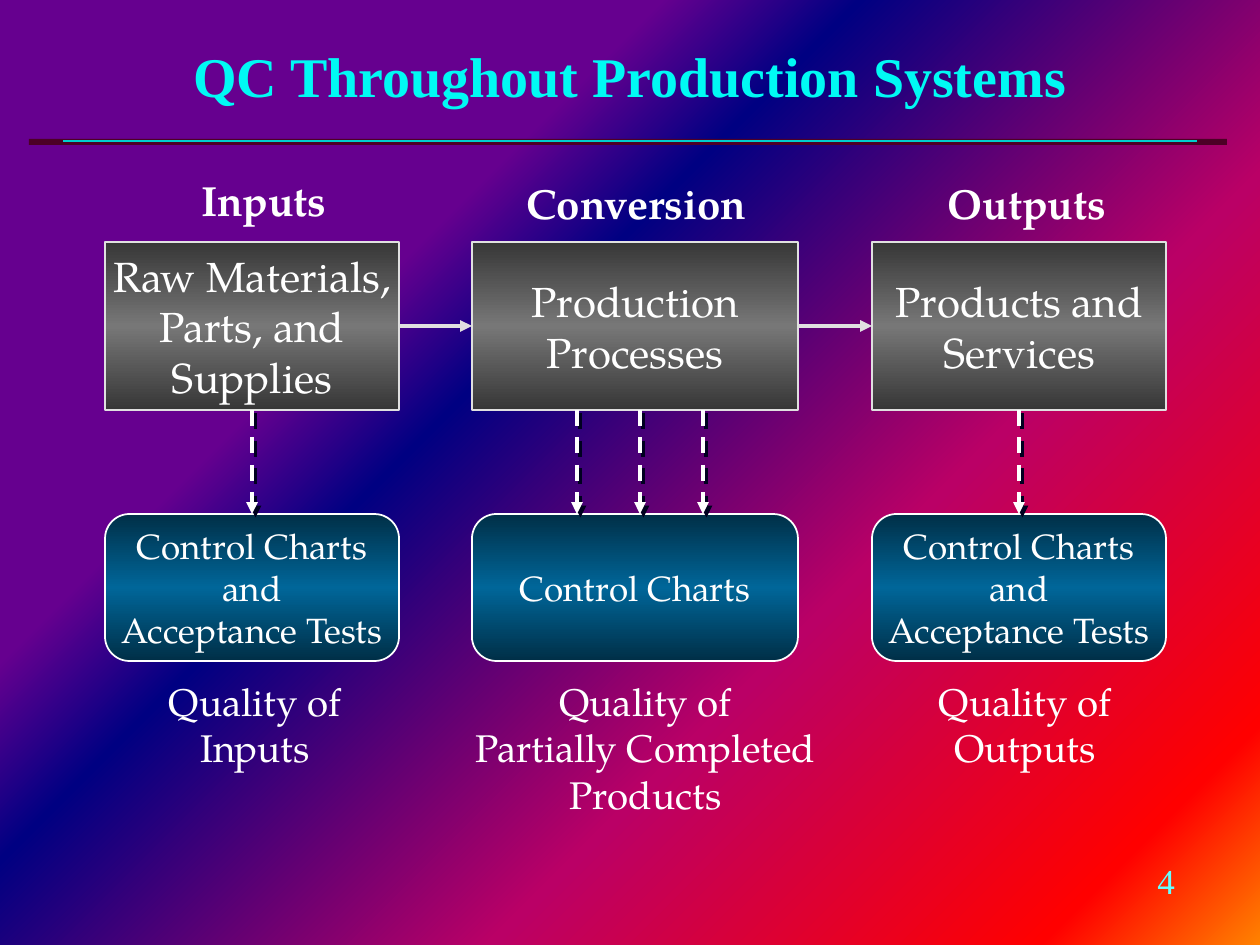
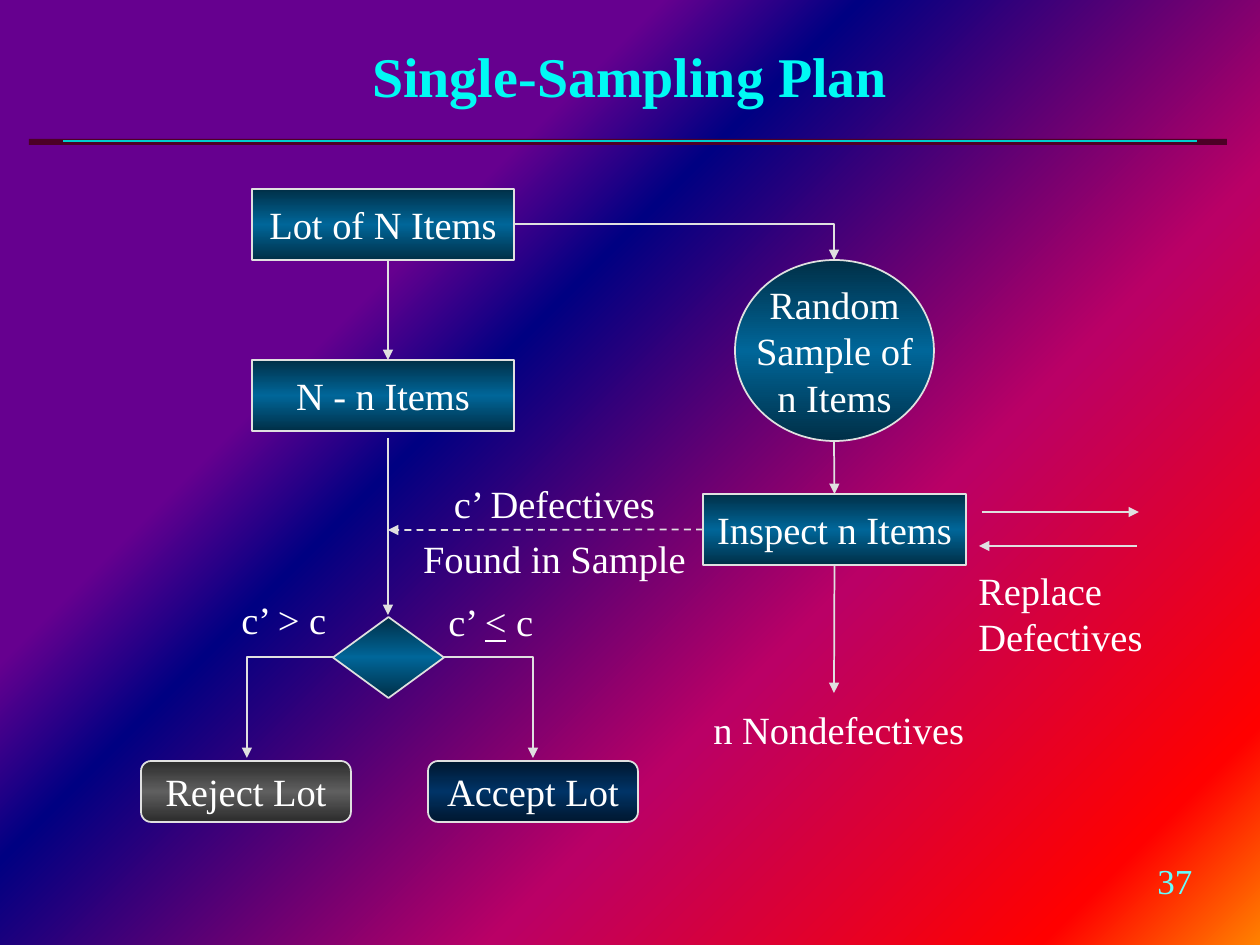
from dataclasses import dataclass

from lxml.etree import SubElement
from pptx import Presentation
from pptx.dml.color import RGBColor
from pptx.enum.dml import MSO_LINE
from pptx.enum.shapes import MSO_CONNECTOR, MSO_SHAPE
from pptx.enum.text import MSO_ANCHOR, MSO_AUTO_SIZE, PP_ALIGN
from pptx.oxml.ns import qn
from pptx.util import Emu, Pt

EMU_PER_PX = 914400 / 126
TOP, LEFT, BOTTOM, RIGHT = range(4)


@dataclass(frozen=True)
class Theme:
    backdrop: tuple = ((30, "66008F"), (39, "000082"), (65, "BA0066"),
                       (90, "FF0000"), (100, "FF8200"))
    steel: tuple = ((0, "373737"), (50, "777777"), (100, "373737"))
    teal: tuple = ((0, "002F47"), (50, "006699"), (100, "002F47"))
    slate: tuple = ((0, "2C2C2C"), (50, "5F5F5F"), (100, "2C2C2C"))
    navy: tuple = ((0, "00172F"), (50, "003366"), (100, "00172F"))
    band: str = "4C0026"
    rule: str = "00CECE"
    title: str = "00FAF4"
    number: str = "66FFFF"
    text: str = "FFFFFF"
    outline: str = "E0E0E0"
    shadow: str = "000020"
    serif: str = "Times New Roman"
    book: str = "TeX Gyre Pagella"
    title_size: int = 32
    heading_size: int = 24
    body_size: int = 22
    small_size: int = 20


THEME = Theme()


def px(length):
    return Emu(round(length * EMU_PER_PX))


def px_all(lengths):
    return [px(length) for length in lengths]


def paint_gradient(fill, owner, stops, clockwise):
    fill.gradient()
    fill.gradient_angle = 360 - clockwise
    stop_list = next(owner.iter(qn("a:gsLst")))
    for stop in list(stop_list):
        stop_list.remove(stop)
    for position, color in stops:
        stop = SubElement(stop_list, qn("a:gs"), pos=str(position * 1000))
        SubElement(stop, qn("a:srgbClr"), val=color)


def add_shadow(effects):
    cast = SubElement(effects, qn("a:outerShdw"), dist="35560", dir="2700000",
                      algn="ctr", rotWithShape="0")
    SubElement(cast, qn("a:srgbClr"), val=THEME.shadow)


def style_text(frame, size, font, color=THEME.text, bold=False, align=PP_ALIGN.CENTER):
    for paragraph in frame.paragraphs:
        paragraph.alignment = align
        for run in paragraph.runs:
            run.font.size = Pt(size)
            run.font.name = font
            run.font.bold = bold
            run.font.color.rgb = RGBColor.from_string(color)


def add_label(slide, box, words, size=THEME.body_size, font=THEME.serif, **style):
    label = slide.shapes.add_textbox(*px_all(box))
    frame = label.text_frame
    frame.text = words
    frame.word_wrap = False
    frame.auto_size = MSO_AUTO_SIZE.SHAPE_TO_FIT_TEXT
    style_text(frame, size, font, **style)
    return frame


def add_node(slide, box, words, stops, kind=MSO_SHAPE.RECTANGLE,
             size=THEME.body_size, font=THEME.serif, outline=THEME.outline):
    node = slide.shapes.add_shape(kind, *px_all(box))
    node.shadow.inherit = False
    paint_gradient(node.fill, node._element, stops, 90)
    node.line.color.rgb = RGBColor.from_string(outline)
    node.line.width = Pt(1)
    if words:
        frame = node.text_frame
        frame.text = words
        frame.word_wrap = False
        frame.vertical_anchor = MSO_ANCHOR.MIDDLE
        style_text(frame, size, font)
    return node


def add_line(slide, ends, color=THEME.outline, width=1, kind=MSO_CONNECTOR.STRAIGHT):
    line = slide.shapes.add_connector(kind, *px_all(ends))
    line.line.color.rgb = RGBColor.from_string(color)
    line.line.width = Pt(width)
    return line, SubElement(line._element.spPr, qn("a:effectLst"))


def add_arrow(slide, ends, color=THEME.outline, width=1, dashed=False,
              shadowed=False, bent=False, start=None, finish=None):
    kind = MSO_CONNECTOR.ELBOW if bent else MSO_CONNECTOR.STRAIGHT
    arrow, effects = add_line(slide, ends, color, width, kind)
    if bent:
        arrow._element.spPr.find(qn("a:prstGeom")).set("prst", "bentConnector2")
    if dashed:
        arrow.line.dash_style = MSO_LINE.DASH
    if shadowed:
        add_shadow(effects)
    SubElement(arrow._element.spPr.find(qn("a:ln")), qn("a:tailEnd"), type="triangle")
    if start:
        arrow.begin_connect(*start)
    if finish:
        arrow.end_connect(*finish)


def add_title(slide, words):
    title = slide.shapes.add_textbox(*px_all((42, 10, 1176, 131)))
    frame = title.text_frame
    frame.text = words
    frame.word_wrap = True
    frame.vertical_anchor = MSO_ANCHOR.MIDDLE
    style_text(frame, THEME.title_size, THEME.serif, THEME.title, bold=True)
    properties = frame.paragraphs[0].runs[0].font._element
    effects = SubElement(properties, qn("a:effectLst"))
    add_shadow(effects)
    properties.find(qn("a:solidFill")).addnext(effects)


def start_slide(deck, title, number):
    slide = deck.slides.add_slide(deck.slide_layouts[6])
    paint_gradient(slide.background.fill, slide._element, THEME.backdrop, 45)
    band = slide.shapes.add_shape(MSO_SHAPE.RECTANGLE, *px_all((29, 139, 1198, 6)))
    band.shadow.inherit = False
    band.fill.solid()
    band.fill.fore_color.rgb = RGBColor.from_string(THEME.band)
    band.line.fill.background()
    add_line(slide, (63, 141, 1197, 141), THEME.rule)
    page = add_label(slide, (1145, 853, 66, 54), number, THEME.small_size,
                     color=THEME.number, align=PP_ALIGN.LEFT)
    page.word_wrap = True
    add_title(slide, title)
    return slide


def build_production_slide(deck):
    slide = start_slide(deck, "QC Throughout Production Systems", "4")
    tests = "Control Charts\nand\nAcceptance Tests"
    stages = (
        (105, 294, "Inputs", (189, 168, 151, 63), "Raw Materials,\nParts, and\nSupplies",
         tests, "Quality of\nInputs", (156, 672, 198, 105), (252,)),
        (472, 326, "Conversion", (514, 171, 247, 63), "Production\nProcesses",
         "Control Charts", "Quality of\nPartially Completed\nProducts",
         (461, 672, 369, 151), (577, 640, 703)),
        (872, 294, "Outputs", (935, 171, 184, 63), "Products and\nServices",
         tests, "Quality of\nOutputs", (926, 672, 198, 105), (1019,)),
    )
    previous = None
    for left, width, heading, heading_box, work, check, quality, quality_box, drops in stages:
        add_label(slide, heading_box, heading, THEME.heading_size, THEME.book,
                  bold=True, align=PP_ALIGN.LEFT)
        step = add_node(slide, (left, 242, width, 168), work, THEME.steel,
                        size=THEME.heading_size, font=THEME.book)
        control = add_node(slide, (left, 514, width, 147), check, THEME.teal,
                           MSO_SHAPE.ROUNDED_RECTANGLE, THEME.small_size,
                           THEME.book, THEME.text)
        add_label(slide, quality_box, quality, font=THEME.book)
        if previous:
            add_arrow(slide, (left - 73, 326, left, 326), width=2.25,
                      start=(previous, RIGHT), finish=(step, LEFT))
        for x in drops:
            centred = len(drops) == 1
            add_arrow(slide, (x, 410, x, 514), THEME.text, 2.25, dashed=True, shadowed=True,
                      start=(step, BOTTOM) if centred else None,
                      finish=(control, TOP) if centred else None)
        previous = step


def build_sampling_slide(deck):
    slide = start_slide(deck, "Single-Sampling Plan", "37")
    add_node(slide, (252, 189, 262, 71), "Lot of N Items", THEME.teal)
    add_node(slide, (735, 260, 199, 181), "Random\nSample of\nn Items", THEME.teal,
             MSO_SHAPE.OVAL)
    add_node(slide, (252, 360, 262, 71), "N - n Items", THEME.teal)
    inspection = add_node(slide, (703, 494, 263, 71), "Inspect n Items", THEME.teal)
    add_node(slide, (333, 617, 111, 81), "", THEME.teal, MSO_SHAPE.DIAMOND)
    for left, verdict, stops in ((141, "Reject Lot", THEME.slate),
                                 (428, "Accept Lot", THEME.navy)):
        add_node(slide, (left, 761, 210, 61), verdict, stops, MSO_SHAPE.ROUNDED_RECTANGLE)

    for ends in ((388, 260, 388, 360), (388, 438, 388, 615),
                 (982, 512, 1139, 512), (1137, 546, 979, 546)):
        add_arrow(slide, ends)
    add_arrow(slide, (834, 441, 834, 494), finish=(inspection, TOP))
    add_arrow(slide, (834, 565, 834, 693), start=(inspection, BOTTOM))
    add_arrow(slide, (703, 530, 388, 530), dashed=True, start=(inspection, LEFT))
    for ends in ((514, 224, 834, 260), (333, 657, 247, 758), (444, 657, 533, 758)):
        add_arrow(slide, ends, bent=True)

    for box, words in (((229, 590, 113, 59), "c’ > c"),
                       ((966, 561, 190, 105), "Replace\nDefectives"),
                       ((701, 700, 276, 59), "n Nondefectives")):
        add_label(slide, box, words, align=PP_ALIGN.LEFT)
    within_limit = add_label(slide, (436, 592, 113, 59), "c’ ", align=PP_ALIGN.LEFT)
    for piece, underlined in (("<", True), (" c", False)):
        run = within_limit.paragraphs[0].add_run()
        run.text = piece
        run.font.underline = underlined
    style_text(within_limit, THEME.body_size, THEME.serif, align=PP_ALIGN.LEFT)
    findings = add_label(slide, (410, 474, 289, 113), "c’ Defectives\nFound in Sample")
    findings.paragraphs[1].space_before = Pt(5)


def main():
    deck = Presentation()
    deck.slide_width, deck.slide_height = px_all((1260, 945))
    build_production_slide(deck)
    build_sampling_slide(deck)
    deck.save("out.pptx")


if __name__ == "__main__":
    main()
